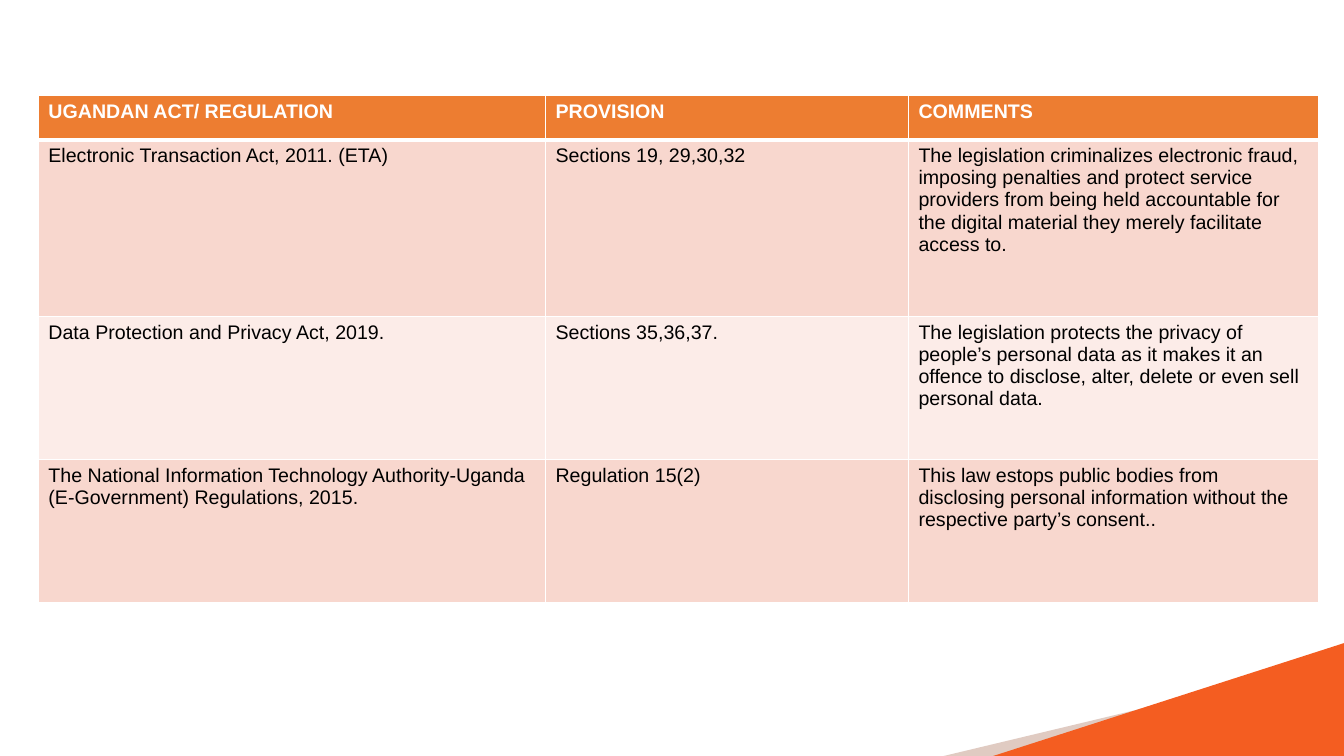
from lxml import etree
from pptx import Presentation
from pptx import util as u
from pptx.dml.color import RGBColor
from pptx.oxml import ns

HUES = {
    "white": "FFFFFF",
    "black": "000000",
    "head": "ED7D31",
    "dark": "F8D7CE",
    "light": "FCECE8",
    "sand": "E0CBC2",
    "flame": "F45D21",
}
WIDE, HIGH = 13.33, 7.5
COLS = [5.03, 3.6, 4.07]
ROWS = [0.44, 1.75, 1.42, 1.42]
LAWS = [
    ["UGANDAN ACT/ REGULATION", "PROVISION", "COMMENTS"],
    ["Electronic Transaction Act, 2011. (ETA)",
     "Sections 19, 29,30,32",
     "The legislation criminalizes electronic fraud, imposing penalties and "
     "protect service providers from being held accountable for the digital "
     "material they merely facilitate access to."],
    ["Data Protection and Privacy Act, 2019.",
     "Sections 35,36,37.",
     "The legislation protects the privacy of people’s personal data as it "
     "makes it an offence to disclose, alter, delete or even sell personal data."],
    ["The National Information Technology Authority-Uganda (E-Government) "
     "Regulations, 2015.",
     "Regulation 15(2)",
     "This law estops public bodies from disclosing personal information "
     "without the respective party’s consent.."],
]


def paint(fill, hue):
    fill.solid()
    fill.fore_color.rgb = RGBColor.from_string(HUES[hue])


def write(frame, words, size=14, hue="black", bold=False, face="Arial"):
    run = frame.paragraphs[0].add_run()
    run.text = words
    run.font.size = u.Pt(size)
    run.font.bold = bold
    run.font.name = face
    run.font.color.rgb = RGBColor.from_string(HUES[hue])


def edge(cell, side, width, hue="white"):
    props = cell._tc.get_or_add_tcPr()
    line = etree.SubElement(props, ns.qn(f"a:ln{side}"), w=str(u.Pt(width)))
    fill = etree.SubElement(line, ns.qn("a:solidFill"))
    etree.SubElement(fill, ns.qn("a:srgbClr"), val=HUES[hue])


def wedge(slide, left, top, hue):
    """Draw a corner triangle that rises to the right edge."""
    points = [(WIDE, top), (WIDE, HIGH), (left, HIGH)]
    first, *rest = [(u.Inches(x), u.Inches(y)) for x, y in points]
    form = slide.shapes.build_freeform(*first)
    form.add_line_segments(rest, close=True)
    shape = form.convert_to_shape()
    shape.shadow.inherit = False
    paint(shape.fill, hue)
    shape.line.fill.background()


def grid(slide, left, top):
    table = slide.shapes.add_table(
        len(ROWS), len(COLS), u.Inches(left), u.Inches(top),
        u.Inches(sum(COLS)), u.Inches(sum(ROWS))).table
    for col, width in zip(table.columns, COLS):
        col.width = u.Inches(width)
    for row, height in zip(table.rows, ROWS):
        row.height = u.Inches(height)

    for r, law in enumerate(LAWS):
        head = r == 0
        fill = "head" if head else ("dark" if r % 2 else "light")
        for c, words in enumerate(law):
            cell = table.cell(r, c)
            for side in "LRTB":
                # The rule under the heading row is heavier
                heavy = (side == "B" and head) or (side == "T" and r == 1)
                edge(cell, side, 3 if heavy else 1)
            paint(cell.fill, fill)
            write(cell.text_frame, words, bold=head,
                  hue="white" if head else "black")


def main():
    deck = Presentation()
    deck.slide_width, deck.slide_height = u.Inches(WIDE), u.Inches(HIGH)
    slide = deck.slides.add_slide(deck.slide_layouts[6])
    paint(slide.background.fill, "white")

    # Corner wedges
    wedge(slide, 9.36, 6.55, "sand")
    wedge(slide, 9.85, 6.38, "flame")

    # Table of laws
    grid(slide, 0.38, 0.95)

    deck.save("out.pptx")


if __name__ == "__main__":
    main()
